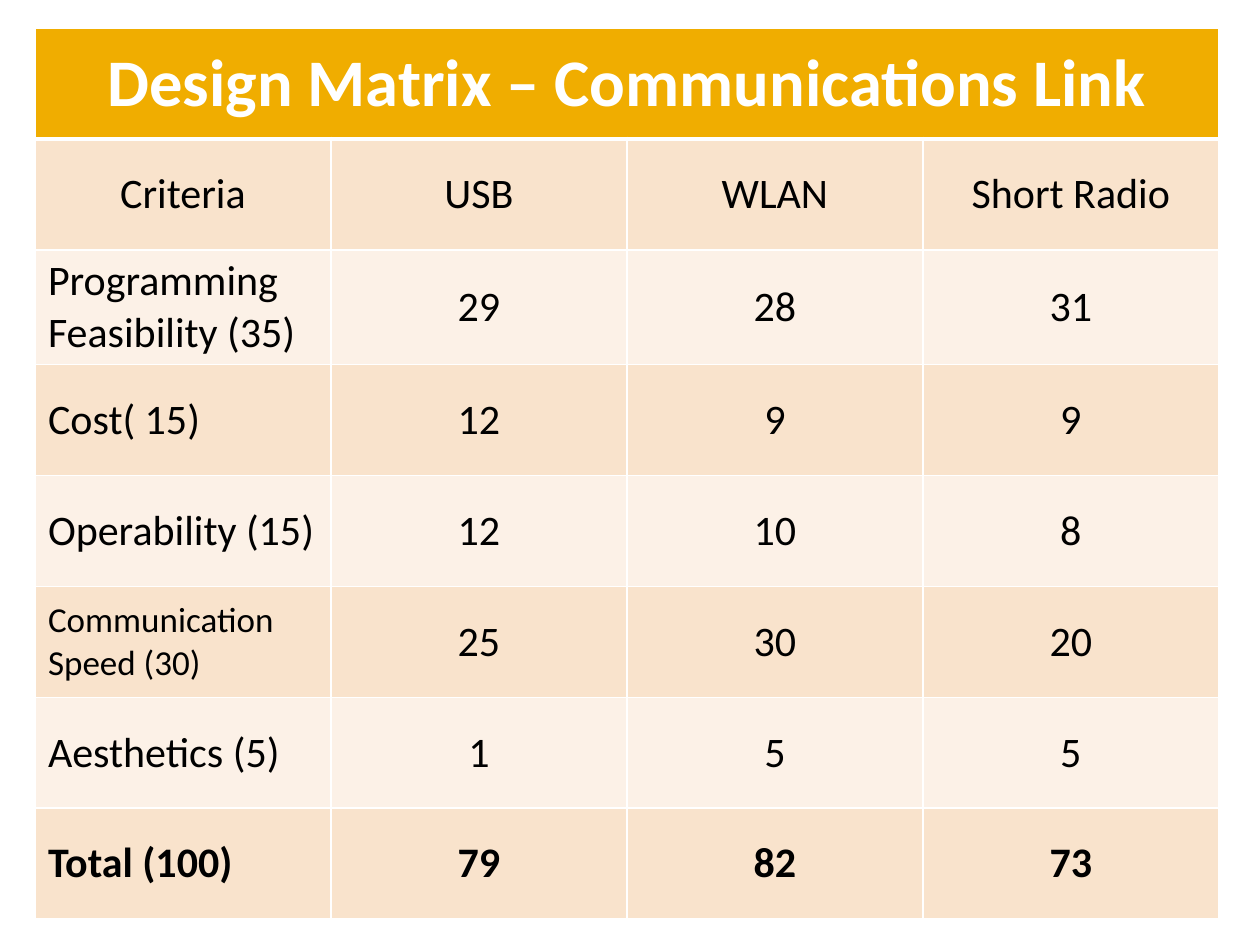
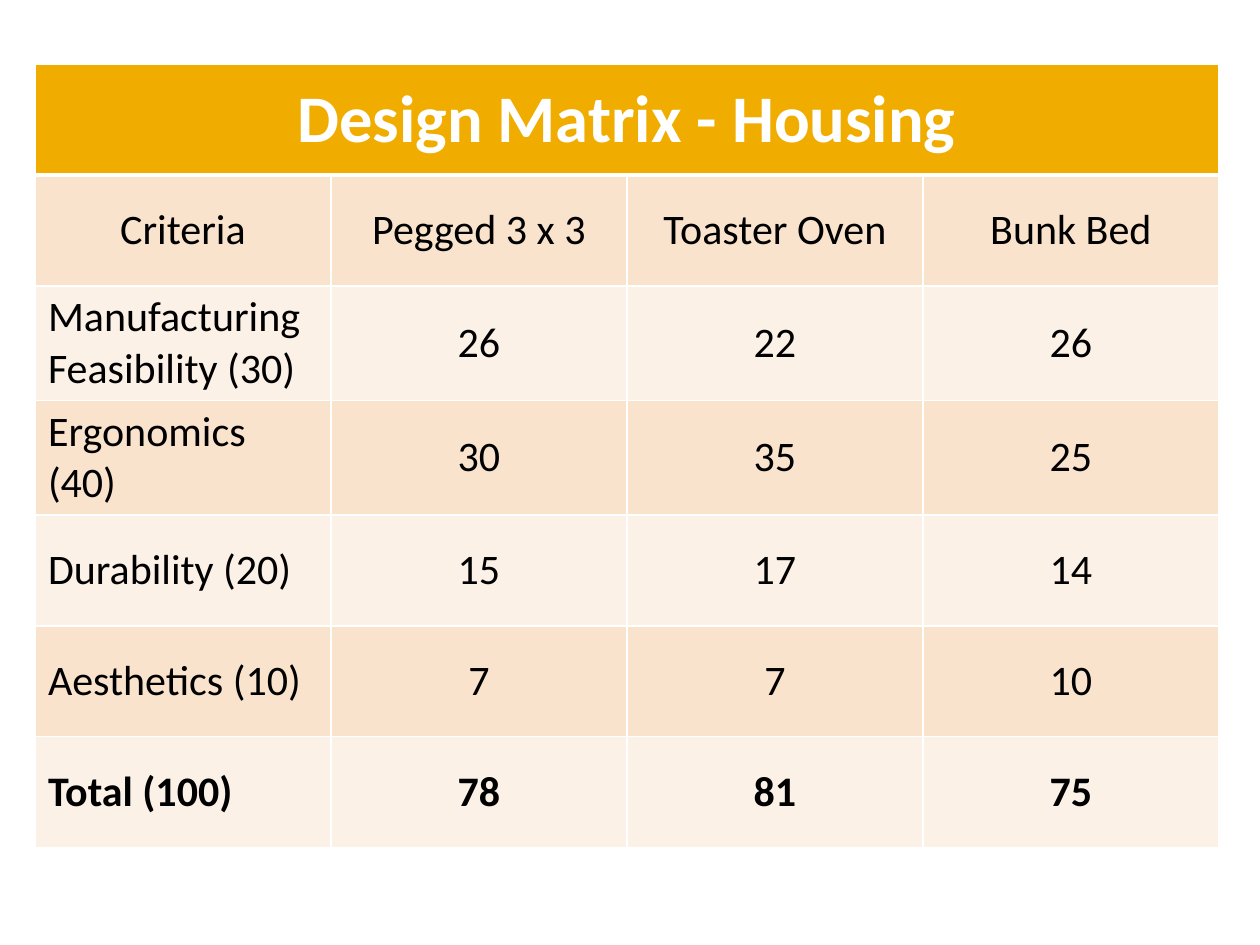
from dataclasses import dataclass

from lxml.etree import SubElement
from pptx import Presentation
from pptx.dml.color import RGBColor
from pptx.enum.text import MSO_ANCHOR as ANCHOR, PP_ALIGN as ALIGN
from pptx.oxml.ns import qn
from pptx.util import Emu, Pt

PX = 914400 // 126


@dataclass(frozen=True)
class Theme:
    font: str = "Calibri"
    title_fill: str = "F0AD00"
    bands: tuple = ("F9E3CC", "FCF1E7")
    text: str = "000000"
    white: str = "FFFFFF"
    title_size: int = 38
    body_size: int = 24
    small_size: int = 20
    rule: int = 1
    title_rule: int = 3


THEME = Theme()
SLIDE_W, SLIDE_H = 1260, 945
LEFT, COL_W, ROW_H = 35, 296, 111
PAD_X, PAD_Y = 13, 6
BLANK_LAYOUT = 6

COMMUNICATIONS = [
    ("Criteria", "USB", "WLAN", "Short Radio"),
    ("Programming Feasibility (35)", 29, 28, 31),
    ("Cost( 15)", 12, 9, 9),
    ("Operability (15)", 12, 10, 8),
    ("Communication Speed (30)", 25, 30, 20),
    ("Aesthetics (5)", 1, 5, 5),
    ("Total (100)", 79, 82, 73),
]
HOUSING = [
    ("Criteria", "Pegged 3 x 3", "Toaster Oven", "Bunk Bed"),
    ("Manufacturing Feasibility (30)", 26, 22, 26),
    ("Ergonomics (40)", 30, 35, 25),
    ("Durability (20)", 15, 17, 14),
    ("Aesthetics (10)", 7, 7, 10),
    ("Total (100)", 78, 81, 75),
]


def px(n):
    return Emu(n * PX)


def set_borders(cell, top=THEME.rule, bottom=THEME.rule):
    """Draw white borders; call before the fill, which must follow them."""
    tc_pr = cell._tc.get_or_add_tcPr()
    widths = {"L": THEME.rule, "R": THEME.rule, "T": top, "B": bottom}
    for side, width in widths.items():
        ln = SubElement(tc_pr, qn(f"a:ln{side}"), w=str(Pt(width)))
        fill = SubElement(ln, qn("a:solidFill"))
        SubElement(fill, qn("a:srgbClr"), val=THEME.white)


def paint(cell, colour):
    cell.fill.solid()
    cell.fill.fore_color.rgb = RGBColor.from_string(colour)


def write(cell, text, size, colour, bold=False, align=ALIGN.CENTER):
    cell.vertical_anchor = ANCHOR.MIDDLE
    cell.margin_left = cell.margin_right = px(PAD_X)
    cell.margin_top = cell.margin_bottom = px(PAD_Y)
    cell.text = str(text)
    p = cell.text_frame.paragraphs[0]
    p.alignment = align
    p.font.name = THEME.font
    p.font.size = Pt(size)
    p.font.bold = bold
    p.font.color.rgb = RGBColor.from_string(colour)


def fill_title_row(table):
    for cell in table.rows[0].cells:
        set_borders(cell, bottom=THEME.title_rule)
        paint(cell, THEME.title_fill)
    table.cell(0, 0).merge(table.cell(0, len(table.columns) - 1))


def add_matrix_slide(prs, title, scores, top, small_labels=()):
    slide = prs.slides.add_slide(prs.slide_layouts[BLANK_LAYOUT])
    n_rows, n_cols = len(scores) + 1, len(scores[0])
    table = slide.shapes.add_table(
        n_rows, n_cols, px(LEFT), px(top), px(n_cols * COL_W), px(n_rows * ROW_H)
    ).table
    for column in table.columns:
        column.width = px(COL_W)
    for row in table.rows:
        row.height = px(ROW_H)

    fill_title_row(table)
    write(table.cell(0, 0), title, THEME.title_size, THEME.white, bold=True)

    for i, values in enumerate(scores):
        for j, value in enumerate(values):
            cell = table.cell(i + 1, j)
            set_borders(cell, top=THEME.rule if i else THEME.title_rule)
            paint(cell, THEME.bands[i % 2])
            is_label = i > 0 and j == 0
            write(
                cell,
                value,
                THEME.small_size if value in small_labels else THEME.body_size,
                THEME.text,
                bold=i == len(scores) - 1,
                align=ALIGN.LEFT if is_label else ALIGN.CENTER,
            )


def main():
    prs = Presentation()
    prs.slide_width, prs.slide_height = px(SLIDE_W), px(SLIDE_H)
    add_matrix_slide(
        prs,
        "Design Matrix – Communications Link",
        COMMUNICATIONS,
        top=28,
        small_labels=("Communication Speed (30)",),
    )
    add_matrix_slide(prs, "Design Matrix - Housing", HOUSING, top=64)
    prs.save("out.pptx")


if __name__ == "__main__":
    main()
